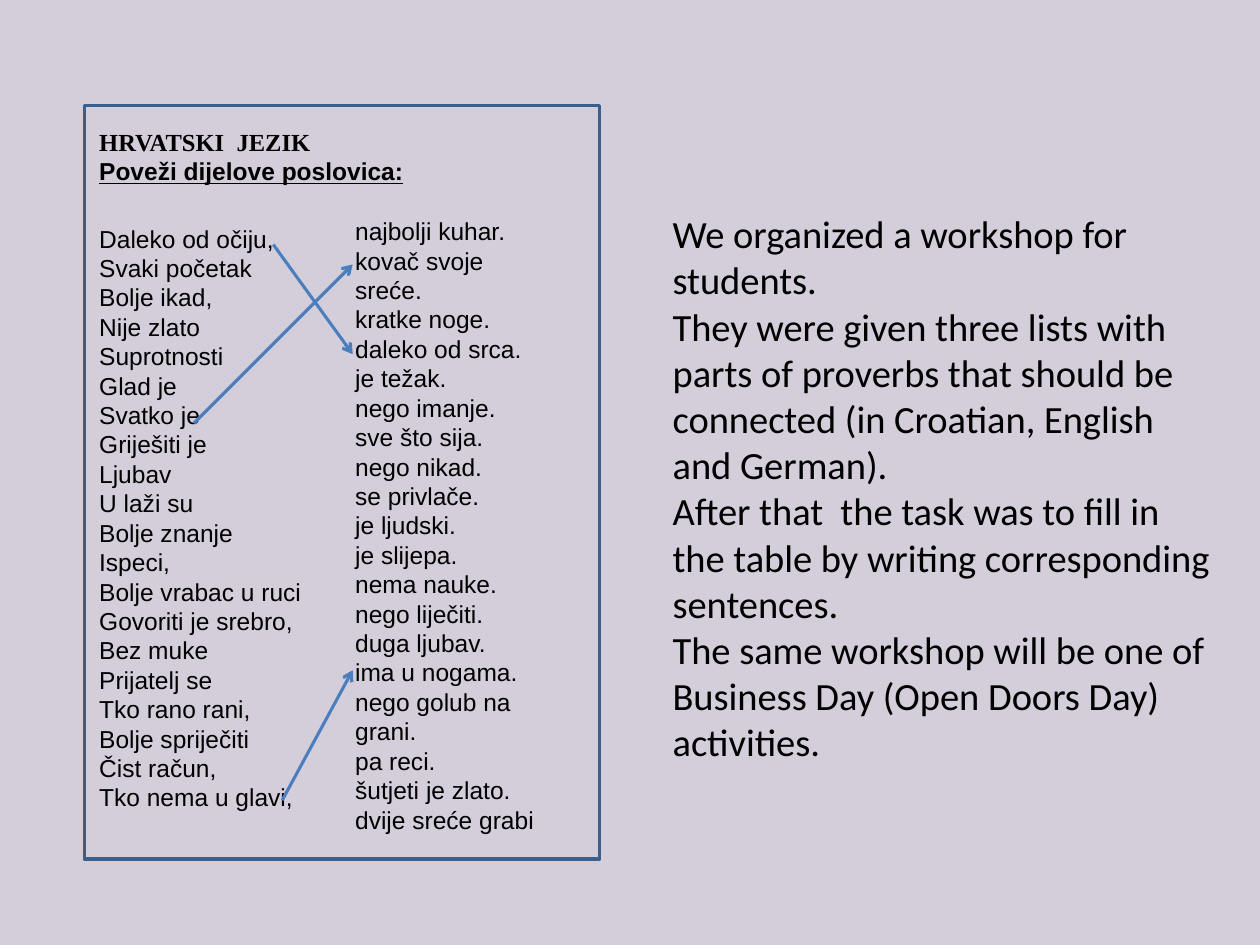
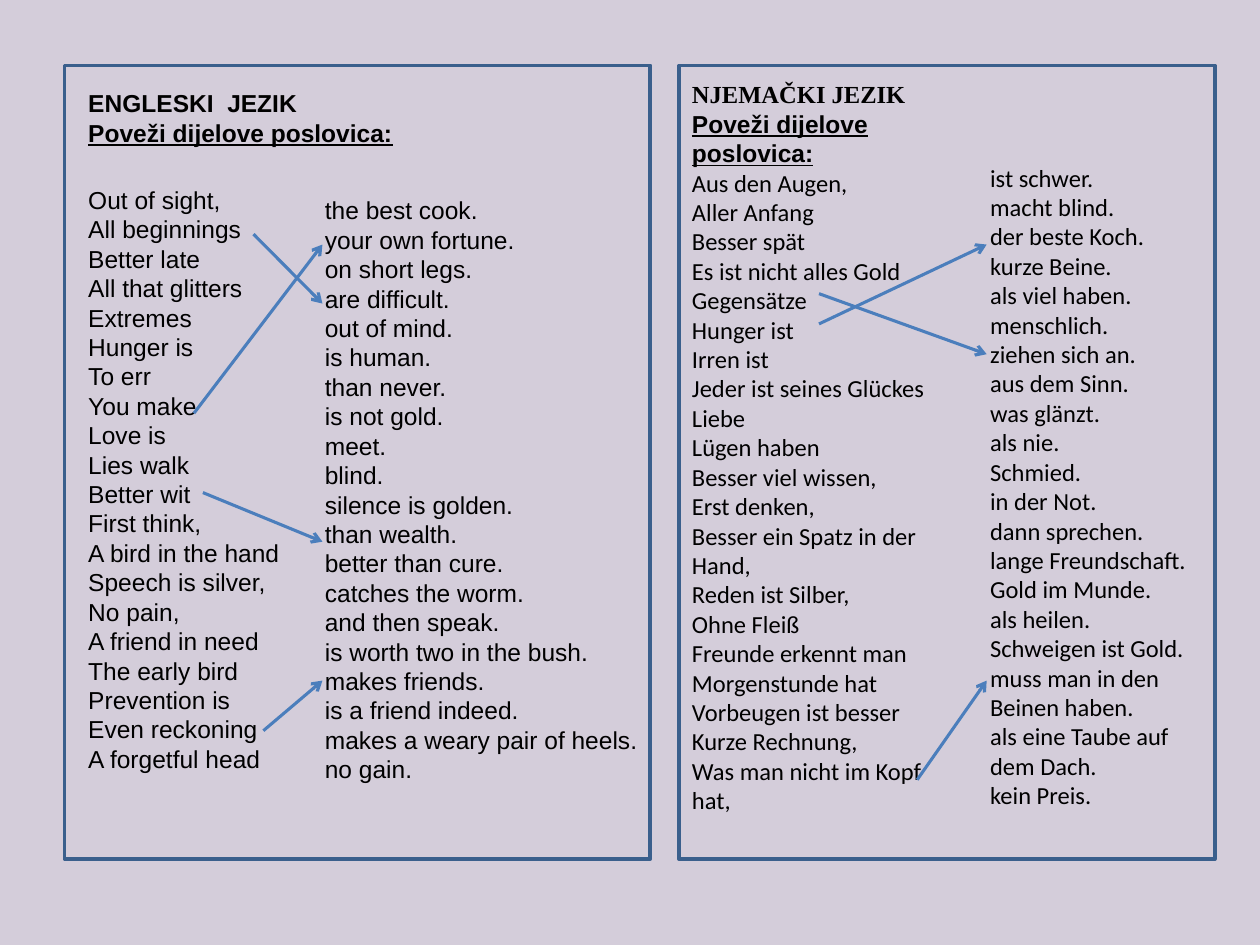
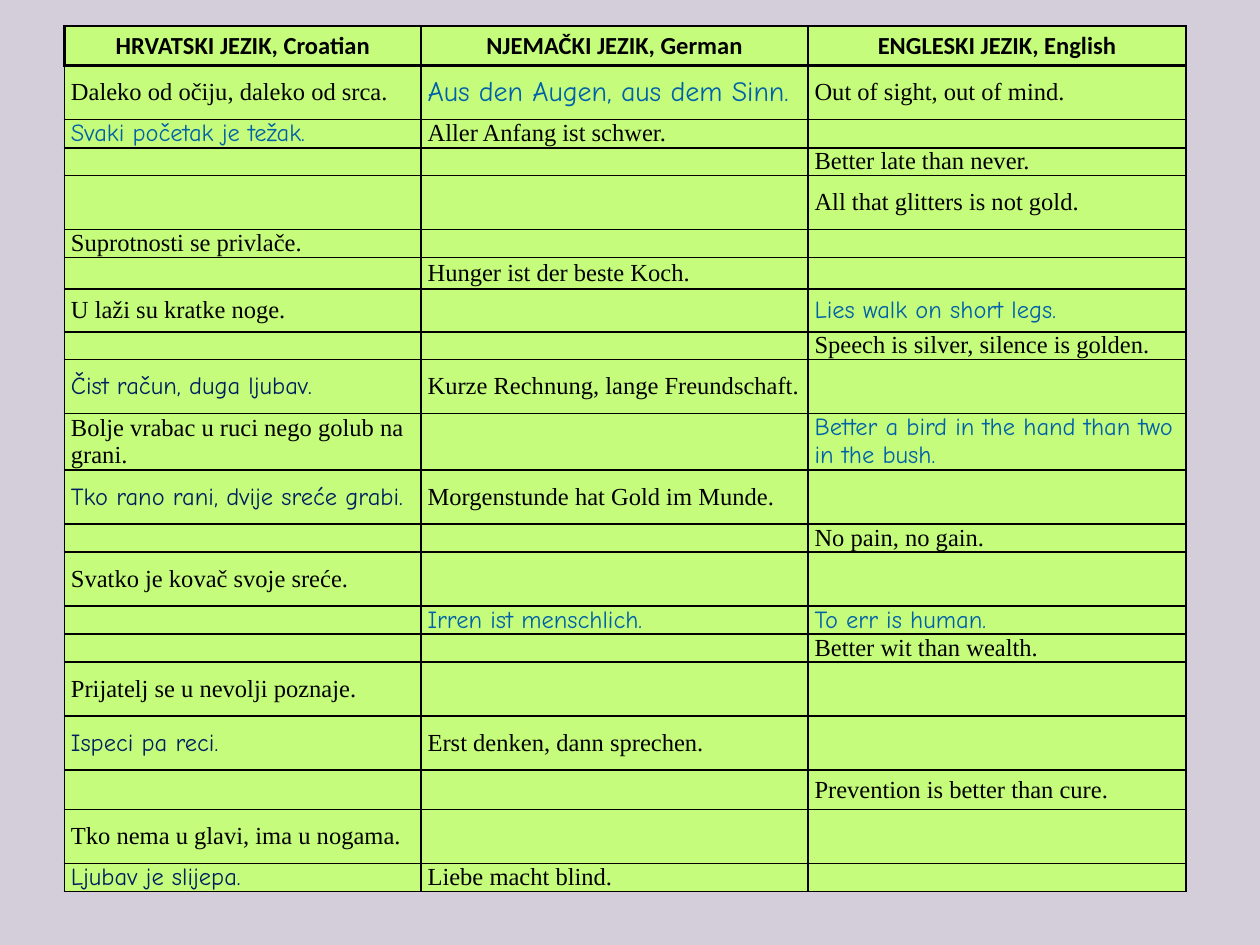
from dataclasses import dataclass

from lxml import etree
from pptx import Presentation
from pptx import util as u
from pptx.dml import color as c
from pptx.enum import shapes, text
from pptx.oxml import ns


@dataclass(frozen=True)
class Theme:
    background: str = "D4CDDA"
    ink: str = "000000"
    frame: str = "3A5F8C"
    arrow: str = "4B7EBC"
    cell: str = "C5FC7C"
    blue: str = "0060A8"
    navy: str = "002060"
    sans: str = "Arial"
    serif: str = "Times New Roman"
    body: str = "Calibri"
    hand: str = "Comic Neue"
    small: float = 14
    medium: float = 16
    large: float = 22
    leading: float = 1.2
    list_gap: float = 21.6


THEME = Theme()
BLUE = dict(font=THEME.hand, color=THEME.blue)
NAVY = dict(font=THEME.hand, color=THEME.navy)


def rgb(value):
    return c.RGBColor.from_string(value)


def write(paragraph, content, font=THEME.sans, size=THEME.small, color=THEME.ink,
          bold=False, underline=False, align=None, leading=None, before=0):
    """Fill a paragraph with one formatted run; leading is a multiple of the size."""
    if align is not None:
        paragraph.alignment = align
    if leading:
        paragraph.line_spacing = u.Pt(size * leading)
    if before:
        paragraph.space_before = u.Pt(before)
    run = paragraph.add_run()
    run.text = content
    run.font.name = font
    run.font.size = u.Pt(size)
    run.font.color.rgb = rgb(color)
    run.font.bold = bold
    run.font.underline = underline


def set_borders(cell, width):
    properties = cell._tc.get_or_add_tcPr()
    for side in ("lnL", "lnR", "lnT", "lnB"):
        line = etree.SubElement(properties, ns.qn(f"a:{side}"), w=str(u.Pt(width)))
        fill = etree.SubElement(line, ns.qn("a:solidFill"))
        etree.SubElement(fill, ns.qn("a:srgbClr"), val=THEME.ink)


class Deck:
    def __init__(self, theme):
        self.theme = theme
        self.presentation = Presentation()
        self.presentation.slide_width = u.Cm(25.4)
        self.presentation.slide_height = u.Cm(19.05)
        fill = self.presentation.slide_master.background.fill
        fill.solid()
        fill.fore_color.rgb = rgb(theme.background)
        self.slide = None

    def new_slide(self):
        self.slide = self.presentation.slides.add_slide(self.presentation.slide_layouts[6])

    def text_box(self, at, lines, insets=(0.25, 0.13, 0.25, 0.13),
                 anchor=text.MSO_ANCHOR.TOP, **format):
        """Each line is a string, or a (string, own format) pair."""
        frame = self.slide.shapes.add_textbox(*map(u.Cm, at)).text_frame
        frame.word_wrap = True
        frame.vertical_anchor = anchor
        (frame.margin_left, frame.margin_top,
         frame.margin_right, frame.margin_bottom) = map(u.Cm, insets)
        for index, line in enumerate(lines):
            content, own = (line, {}) if isinstance(line, str) else line
            paragraph = frame.add_paragraph() if index else frame.paragraphs[0]
            write(paragraph, content, **{"leading": self.theme.leading, **format, **own})

    def beginnings(self, at, language, lines, insets, heading_font, gap=0, **format):
        """Headed list of the first halves of the proverbs."""
        headings = [(language, dict(font=heading_font, bold=True)),
                    ("Poveži dijelove poslovica:",
                     dict(font=self.theme.sans, bold=True, underline=True))]
        first, *rest = lines
        self.text_box(at, [*headings, (first, dict(before=gap)), *rest], insets, **format)

    def endings(self, at, lines, **format):
        self.text_box(at, lines, anchor=text.MSO_ANCHOR.MIDDLE, **format)

    def frame(self, *at):
        shape = self.slide.shapes.add_shape(shapes.MSO_SHAPE.RECTANGLE, *map(u.Cm, at))
        shape.shadow.inherit = False
        shape.fill.background()
        shape.line.color.rgb = rgb(self.theme.frame)
        shape.line.width = u.Pt(2)

    def arrows(self, target_x, links):
        """Each link is start x, start y, end y; all end at target_x."""
        for x, y, target_y in links:
            connector = self.slide.shapes.add_connector(
                shapes.MSO_CONNECTOR.STRAIGHT, *map(u.Cm, (x, y, target_x, target_y)))
            connector.line.color.rgb = rgb(self.theme.arrow)
            connector.line.width = u.Pt(1.75)
            etree.SubElement(connector.line._get_or_add_ln(), ns.qn("a:tailEnd"), type="arrow")
            etree.SubElement(connector._element.spPr, ns.qn("a:effectLst"))

    def table(self, left, top, widths, header, rows):
        """Each row is its height followed by its cells."""
        bold = dict(font=self.theme.body, bold=True, align=text.PP_ALIGN.CENTER)
        rows = [(0.79, *((title, bold) for title in header)), *rows]
        height = sum(row[0] for row in rows)
        table = self.slide.shapes.add_table(
            len(rows), len(widths),
            *map(u.Cm, (left, top, sum(widths), height))).table
        table.first_row = table.horz_banding = False
        for column, width in zip(table.columns, widths):
            column.width = u.Cm(width)
        for index, (row_height, *contents) in enumerate(rows):
            table.rows[index].height = u.Cm(row_height)
            for cell, content in zip(table.rows[index].cells, contents):
                self.fill_cell(cell, content, 1 if index else 1.5)

    def fill_cell(self, cell, content, border):
        set_borders(cell, border)
        cell.fill.solid()
        cell.fill.fore_color.rgb = rgb(self.theme.cell)
        cell.vertical_anchor = text.MSO_ANCHOR.MIDDLE
        cell.margin_left = cell.margin_right = u.Cm(0.13)
        cell.margin_top = cell.margin_bottom = 0
        words, own = (content, {}) if isinstance(content, str) else content
        paragraph = cell.text_frame.paragraphs[0]
        if words:
            write(paragraph, words, **{"font": self.theme.serif, **own})
        else:
            etree.SubElement(paragraph._p, ns.qn("a:endParaRPr"), sz="1200")


def croatian_slide(deck):
    deck.new_slide()
    deck.beginnings(
        (1.7, 0.76, 23.7, 16.51), "HRVATSKI  JEZIK",
        ["Daleko od očiju,", "Svaki početak", "Bolje ikad,", "Nije zlato", "Suprotnosti",
         "Glad je", "Svatko je", "Griješiti je", "Ljubav", "U laži su", "Bolje znanje",
         "Ispeci,", "Bolje vrabac u ruci", "Govoriti je srebro,", "Bez muke",
         "Prijatelj se", "Tko rano rani,", "Bolje spriječiti", "Čist račun,",
         "Tko nema u glavi,"],
        insets=(0.3, 1.8, 2.49, 0), heading_font=THEME.serif, gap=THEME.list_gap)
    deck.endings(
        (6.91, 4.17, 4.39, 12.83),
        ["najbolji kuhar.", "kovač svoje sreće.", "kratke noge.", "daleko od srca.",
         "je težak.", "nego imanje.", "sve što sija.", "nego nikad.", "se privlače.",
         "je ljudski.", "je slijepa.", "nema nauke.", "nego liječiti.", "duga ljubav.",
         "ima u nogama.", "nego golub na grani.", "pa reci.", "šutjeti je zlato.",
         "dvije sreće grabi"])
    deck.frame(1.7, 2.13, 10.39, 15.19)
    deck.text_box(
        (13.31, 4.11, 11.4, 11.53),
        ["We organized a workshop for students.",
         "They were given three lists with parts of proverbs that should be connected "
         "(in Croatian, English and German).",
         "After that  the task was to fill in the table by writing corresponding sentences.",
         "The same workshop will be one of Business Day (Open Doors Day) activities."],
        font=THEME.body, size=THEME.large)
    deck.arrows(7.11, [(5.51, 4.93, 7.14), (5.69, 16.13, 13.51), (3.91, 8.53, 5.33)])


def english_german_slide(deck):
    deck.new_slide()
    deck.beginnings(
        (0, 0, 22.1, 19), "ENGLESKI  JEZIK",
        ["Out of sight,", "All beginnings", "Better late", "All that glitters", "Extremes",
         "Hunger is", "To err", "You make", "Love is", "Lies walk", "Better wit",
         "First think,", "A bird in the hand", "Speech is silver,", "No pain,",
         "A friend in need", "The early bird", "Prevention is", "Even reckoning",
         "A forgetful head"],
        insets=(1.78, 1.78, 2.49, 0), heading_font=THEME.sans, gap=THEME.list_gap)
    deck.endings(
        (6.3, 3.76, 6.81, 12.22),
        ["the best cook.", "your own fortune.", "on short legs.", "are difficult.",
         "out of mind.", "is human.", "than never.", "is not gold.", "meet.", "blind.",
         "silence is golden.", "than wealth.", "better than cure.", "catches the worm.",
         "and then speak.", "is worth two in the bush.", "makes friends.",
         "is a friend indeed.", "makes a weary pair of heels.", "no gain."])
    deck.beginnings(
        (13.31, 1.37, 5.59, 15.85), "NJEMAČKI JEZIK",
        ["Aus den Augen,", "Aller Anfang", "Besser spät", "Es ist nicht alles Gold",
         "Gegensätze", "Hunger ist", "Irren ist", "Jeder ist seines Glückes", "Liebe",
         "Lügen haben", "Besser viel wissen,", "Erst denken,",
         "Besser ein Spatz in der Hand,", "Reden ist Silber,", "Ohne Fleiß",
         "Freunde erkennt man", "Morgenstunde hat", "Vorbeugen ist besser",
         "Kurze Rechnung,", "Was man nicht im Kopf hat,"],
        insets=(0.64, 0.23, 0.25, 0), heading_font=THEME.serif, font=THEME.body)
    deck.endings(
        (19.71, 3.12, 5, 13.36),
        ["ist schwer.", "macht blind.", "der beste Koch.", "kurze Beine.",
         "als viel haben.", "menschlich.", "ziehen sich an.", "aus dem Sinn.",
         "was glänzt.", "als nie.", "Schmied.", "in der Not.", "dann sprechen.",
         "lange Freundschaft.", "Gold im Munde.", "als heilen.", "Schweigen ist Gold.",
         "muss man in den Beinen haben.", "als eine Taube auf dem Dach.", "kein Preis."],
        font=THEME.body)
    deck.frame(1.3, 1.32, 11.81, 16)
    deck.frame(13.69, 1.32, 10.8, 16)
    deck.arrows(6.5, [(5.11, 4.72, 6.12), (4.09, 9.93, 10.92),
                      (5.31, 14.73, 13.72), (3.91, 8.33, 4.93)])
    deck.arrows(19.89, [(16.51, 5.92, 7.14), (16.51, 6.53, 4.93), (18.49, 15.72, 13.72)])


def answers_slide(deck):
    deck.new_slide()
    tall, short = 1.09, 0.56
    deck.table(
        1.3, 0.53, (7.19, 7.8, 7.62),
        ("HRVATSKI JEZIK, Croatian", "NJEMAČKI JEZIK, German", "ENGLESKI JEZIK, English"),
        [(tall, "Daleko od očiju, daleko od srca.",
          ("Aus den Augen, aus dem Sinn.", dict(BLUE, size=THEME.medium)),
          "Out of sight, out of mind."),
         (short, ("Svaki početak je težak.", BLUE), "Aller Anfang ist schwer.", ""),
         (short, "", "", "Better late than never."),
         (tall, "", "", "All that glitters is not gold."),
         (short, "Suprotnosti se privlače.", "", ""),
         (0.64, "", "Hunger ist der beste Koch.", ""),
         (0.86, "U laži su kratke noge.", "", ("Lies walk on short legs.", BLUE)),
         (short, "", "", "Speech is silver, silence is golden."),
         (tall, ("Čist račun, duga ljubav.", NAVY), "Kurze Rechnung, lange Freundschaft.", ""),
         (tall, "Bolje vrabac u ruci nego golub na grani.", "",
          ("Better a bird in the hand than two in the bush.", BLUE)),
         (tall, ("Tko rano rani, dvije sreće grabi.", NAVY),
          "Morgenstunde hat Gold im Munde.", ""),
         (short, "", "", "No pain, no gain."),
         (tall, "Svatko je kovač svoje sreće.", "", ""),
         (short, "", ("Irren ist menschlich.", BLUE), ("To err is human.", BLUE)),
         (short, "", "", "Better wit than wealth."),
         (tall, "Prijatelj se u nevolji poznaje.", "", ""),
         (tall, ("Ispeci pa reci.", NAVY), "Erst denken, dann sprechen.", ""),
         (0.79, "", "", "Prevention is better than cure."),
         (tall, "Tko nema u glavi, ima u nogama.", "", ""),
         (short, ("Ljubav je slijepa.", NAVY), "Liebe macht blind.", "")])


def main():
    deck = Deck(THEME)
    croatian_slide(deck)
    english_german_slide(deck)
    answers_slide(deck)
    deck.presentation.save("out.pptx")


if __name__ == "__main__":
    main()
